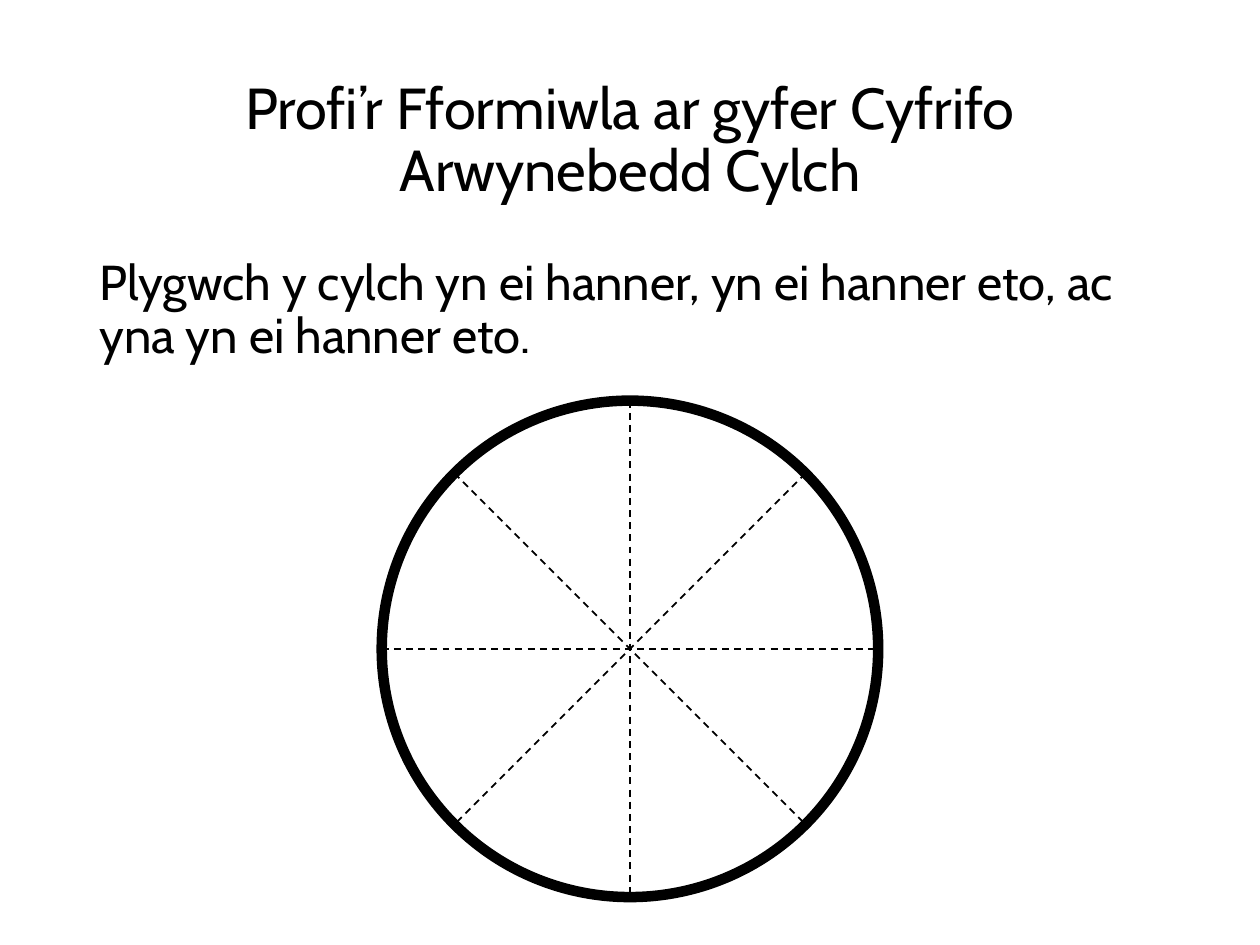
import math

from pptx import Presentation, util as u
from pptx.dml.color import RGBColor
from pptx.enum import dml, shapes, text
from pptx.oxml.ns import qn
from lxml import etree

WIDTH, HEIGHT = u.Inches(10), u.Inches(7.5)
FONT = "Cabin"
COLOURS = {"background": "FFFFFF", "ink": "000000"}
FOLDS = 4


def colour(name):
    return RGBColor.from_string(COLOURS[name])


def share(left, top, width, height):
    """Turn shares of the slide's size into a box."""
    return (int(left * WIDTH), int(top * HEIGHT),
            int(width * WIDTH), int(height * HEIGHT))


def add_text(slide, box, words, size, alignment, anchor, space_before=0):
    text_frame = slide.shapes.add_textbox(*box).text_frame
    text_frame.word_wrap = True
    text_frame.vertical_anchor = anchor
    paragraph = text_frame.paragraphs[0]
    paragraph.text = words
    paragraph.alignment = alignment
    paragraph.line_spacing = 0.9
    paragraph.space_before = u.Pt(space_before)
    font = paragraph.runs[0].font
    font.name, font.size = FONT, u.Pt(size)
    font.color.rgb = colour("ink")


def add_fold(slide, centre, radius, angle):
    """Draw one dashed diameter at the given angle."""
    x, y = centre
    across, down = radius * math.cos(angle), radius * math.sin(angle)
    fold = slide.shapes.add_connector(
        shapes.MSO_CONNECTOR.STRAIGHT,
        round(x - across), round(y - down), round(x + across), round(y + down))
    fold.line.color.rgb = colour("ink")
    fold.line.width = u.Pt(1)
    fold.line.dash_style = dml.MSO_LINE.DASH
    etree.SubElement(fold._element.spPr, qn("a:effectLst"))


def add_folded_circle(slide, box):
    left, top, width, height = box
    # Outline
    circle = slide.shapes.add_shape(shapes.MSO_SHAPE.OVAL, *box)
    circle.shadow.inherit = False
    circle.fill.background()
    circle.line.color.rgb = colour("ink")
    circle.line.width = u.Pt(6)
    # Fold lines, evenly turned about the centre
    centre = (left + width / 2, top + height / 2)
    for fold in range(FOLDS):
        add_fold(slide, centre, width / 2, fold * math.pi / FOLDS)


def main():
    presentation = Presentation()
    presentation.slide_width, presentation.slide_height = WIDTH, HEIGHT
    slide = presentation.slides.add_slide(presentation.slide_layouts[6])
    slide.background.fill.solid()
    slide.background.fill.fore_color.rgb = colour("background")

    # Title
    add_text(slide, (u.Inches(0.69), u.Inches(0.4), u.Inches(8.62), u.Inches(1.45)),
             "Profi’r Fformiwla ar gyfer Cyfrifo Arwynebedd Cylch",
             33, text.PP_ALIGN.CENTER, text.MSO_ANCHOR.MIDDLE)
    # Instruction
    add_text(slide, (u.Inches(0.69), u.Inches(2), u.Inches(8.62), u.Inches(4.76)),
             "Plygwch y cylch yn ei hanner, yn ei hanner eto, ac yna yn ei hanner eto.",
             28, text.PP_ALIGN.LEFT, text.MSO_ANCHOR.TOP, space_before=7.5)
    # Circle, centred across the slide
    diameter = u.Inches(3.94)
    add_folded_circle(slide, ((WIDTH - diameter) // 2, u.Inches(3.18),
                              diameter, diameter))

    presentation.save("out.pptx")


if __name__ == "__main__":
    main()
